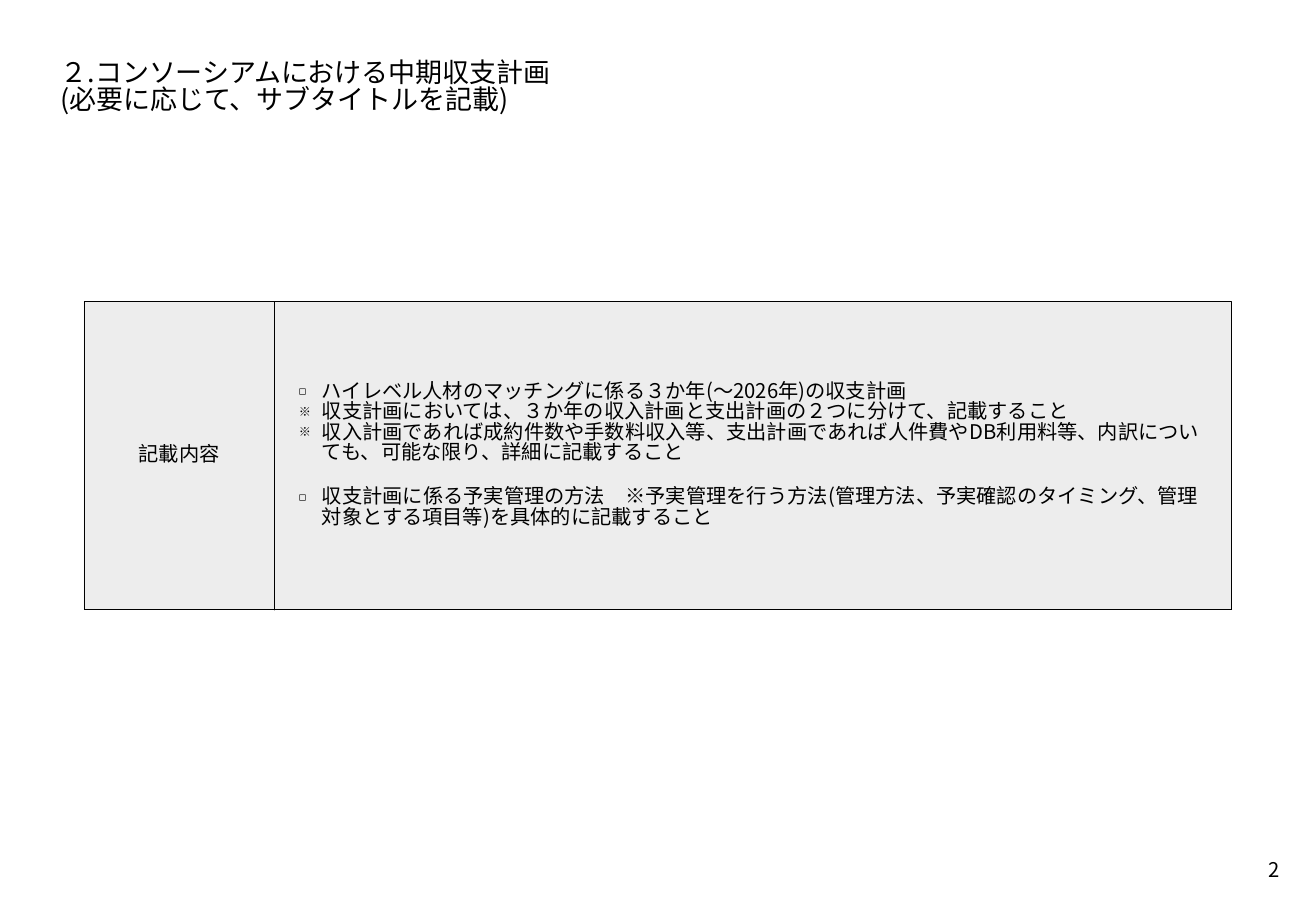
from collections import namedtuple
from dataclasses import dataclass

from pptx import Presentation
from pptx.dml.color import RGBColor
from pptx.enum.dml import MSO_LINE
from pptx.enum.shapes import MSO_SHAPE
from pptx.enum.text import MSO_ANCHOR as Anchor, MSO_AUTO_SIZE as AutoSize, PP_ALIGN as Align
from pptx.oxml.ns import qn
from pptx.util import Inches, Pt
from lxml.etree import SubElement

Box = namedtuple("Box", "left top width height")


@dataclass(frozen=True)
class Theme:
    """Colours, font and type sizes of the slide."""
    ink: RGBColor = RGBColor(0, 0, 0)
    panel: RGBColor = RGBColor(0xED, 0xED, 0xED)
    font: str = "Noto Sans CJK JP"
    title: int = 16
    body: int = 12
    border: float = 0.25
    line_spacing: float = 0.83


THEME = Theme()
ITEMS = [
    ("◻", "ハイレベル人材のマッチングに係る３か年(～2026年)の収支計画", False),
    ("※", "収支計画においては、３か年の収入計画と支出計画の２つに分けて、記載すること", False),
    ("※", "収入計画であれば成約件数や手数料収入等、支出計画であれば人件費やDB利用料等、"
          "内訳についても、可能な限り、詳細に記載すること", False),
    ("◻", "収支計画に係る予実管理の方法　※予実管理を行う方法(管理方法、予実確認のタイミング、"
          "管理対象とする項目等)を具体的に記載すること", True),
]


def place(shape, box):
    """Move a shape to a box given in inches."""
    shape.left, shape.top, shape.width, shape.height = map(Inches, box)


def set_frame(frame, inset, anchor, wrap=True):
    """Set the margins, anchor and wrapping of a text frame."""
    frame.margin_left = frame.margin_right = Inches(inset)
    frame.margin_top = frame.margin_bottom = Inches(inset)
    frame.vertical_anchor = anchor
    frame.auto_size = AutoSize.NONE
    frame.word_wrap = wrap


def style_para(para, size, align=Align.LEFT):
    """Format a paragraph and its runs in the theme font."""
    para.alignment = align
    para.line_spacing = THEME.line_spacing
    for run in para.runs:
        run.font.size = Pt(size)
        run.font.name = THEME.font
        run.font.color.rgb = THEME.ink
        SubElement(run.font._element, qn("a:ea"), typeface=THEME.font)


def add_bullet(para, mark, indent=0.19):
    """Give a paragraph a small hanging bullet."""
    props = para._p.get_or_add_pPr()
    props.set("marL", str(Inches(indent)))
    props.set("indent", str(-Inches(indent)))
    SubElement(props, qn("a:buSzPct"), val="60000")
    SubElement(props, qn("a:buFont"), typeface=THEME.font)
    SubElement(props, qn("a:buChar"), char=mark)


def add_title(page, box):
    """Fill the title placeholder."""
    title = page.shapes.title
    place(title, box)
    set_frame(title.text_frame, 0.2, Anchor.TOP)
    title.text_frame.text = "２.コンソーシアムにおける中期収支計画\v(必要に応じて、サブタイトルを記載)"
    style_para(title.text_frame.paragraphs[0], THEME.title)


def add_panel(page, box, inset):
    """Add a bordered grey rectangle and return its text frame."""
    panel = page.shapes.add_shape(MSO_SHAPE.RECTANGLE, *map(Inches, box))
    panel.shadow.inherit = False
    panel.fill.solid()
    panel.fill.fore_color.rgb = THEME.panel
    panel.line.color.rgb = THEME.ink
    panel.line.width = Pt(THEME.border)
    panel.line.dash_style = MSO_LINE.ROUND_DOT
    set_frame(panel.text_frame, inset, Anchor.MIDDLE)
    return panel.text_frame


def add_contents(page, box, label_width=1.57):
    """Add the labelled panel listing what to write."""
    items_box = box._replace(left=box.left + label_width, width=box.width - label_width)
    items = add_panel(page, items_box, 0.2)
    items.text = "\n".join(text for _, text, _ in ITEMS)
    for para, (mark, _, new_group) in zip(items.paragraphs, ITEMS):
        style_para(para, THEME.body)
        if new_group:
            para.space_before = Pt(14.5)
        add_bullet(para, mark)
    label = add_panel(page, box._replace(width=label_width), 0.1)
    label.text = "記載内容"
    style_para(label.paragraphs[0], THEME.body, Align.CENTER)


def add_page_number(page, box, number):
    """Add the page number at the lower right."""
    frame = page.shapes.add_textbox(*map(Inches, box)).text_frame
    set_frame(frame, 0.1, Anchor.TOP, wrap=False)
    frame.text = str(number)
    style_para(frame.paragraphs[0], THEME.body, Align.RIGHT)


def main():
    """Build the slide and save the deck."""
    deck = Presentation()
    deck.slide_width, deck.slide_height = Inches(10.83), Inches(7.5)
    page = deck.slides.add_slide(deck.slide_layouts[5])
    add_title(page, Box(0.3, 0.3, 10.24, 0.79))
    add_contents(page, Box(0.69, 2.48, 9.44, 2.54))
    add_page_number(page, Box(10.24, 6.99, 0.39, 0.39), 2)
    deck.save("out.pptx")


if __name__ == "__main__":
    main()
